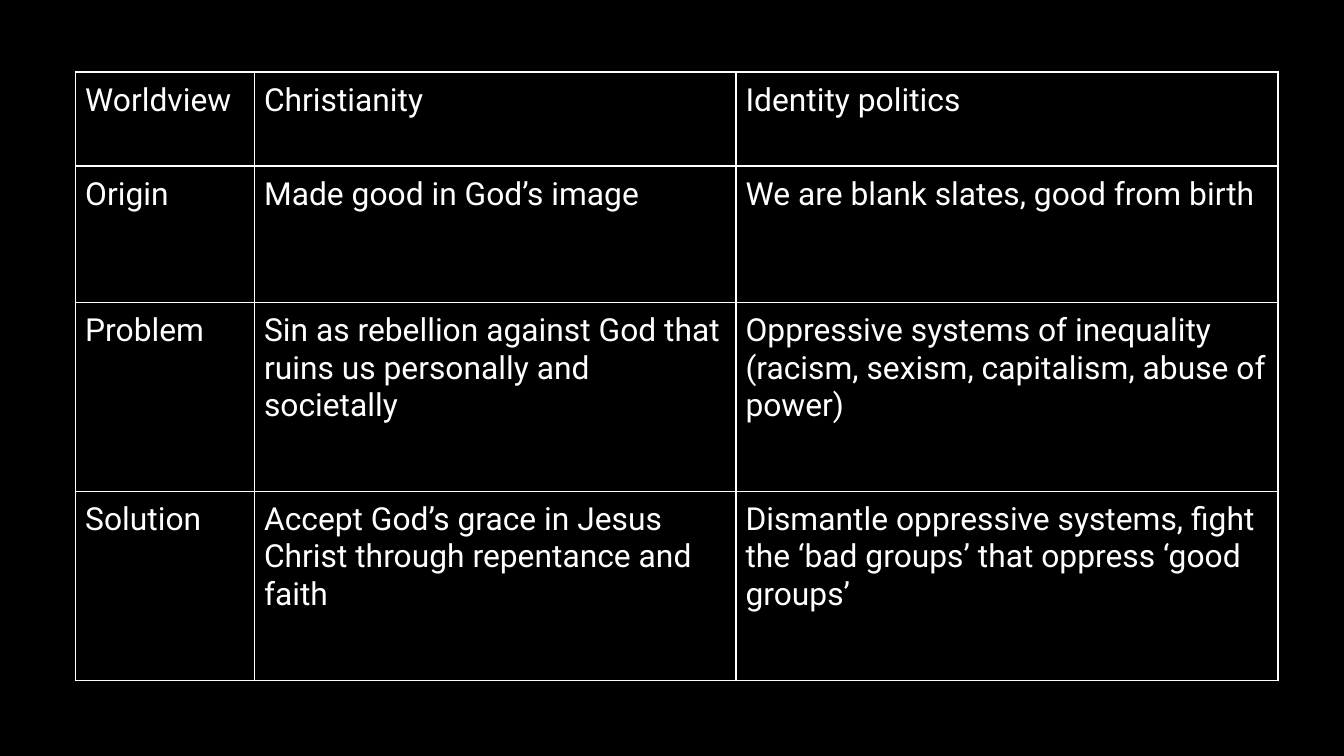
import pptx
import pptx.dml.color
import pptx.oxml.ns
import pptx.util
from lxml import etree

Cm = pptx.util.Cm
Pt = pptx.util.Pt
BLACK = pptx.dml.color.RGBColor(0x00, 0x00, 0x00)
WHITE = pptx.dml.color.RGBColor(0xFF, 0xFF, 0xFF)

# Content
ROWS = [
    ("Worldview", "Christianity", "Identity politics"),
    ("Origin", "Made good in God’s image", "We are blank slates, good from birth"),
    (
        "Problem",
        "Sin as rebellion against God that ruins us personally and societally",
        "Oppressive systems of inequality (racism, sexism, capitalism, abuse of power)",
    ),
    (
        "Solution",
        "Accept God’s grace in Jesus Christ through repentance and faith",
        "Dismantle oppressive systems, fight the ‘bad groups’ that oppress ‘good groups’",
    ),
]

# Layout in centimetres
LEFT, TOP = 1.43, 1.36
COLUMN_WIDTHS = [3.38, 9.1, 10.24]
ROW_HEIGHTS = [1.78, 2.58, 3.57, 3.57]
MARGIN = Cm(0.18)


def add_borders(cell, color, width):
    properties = cell._tc.get_or_add_tcPr()
    for side in ("a:lnL", "a:lnR", "a:lnT", "a:lnB"):
        line = etree.SubElement(properties, pptx.oxml.ns.qn(side), w=str(width))
        fill = etree.SubElement(line, pptx.oxml.ns.qn("a:solidFill"))
        etree.SubElement(fill, pptx.oxml.ns.qn("a:srgbClr"), val=str(color))


def fill_cell(cell, text):
    cell.margin_left = cell.margin_right = MARGIN
    cell.margin_top = cell.margin_bottom = MARGIN
    add_borders(cell, WHITE, Pt(1))
    cell.fill.background()
    run = cell.text_frame.paragraphs[0].add_run()
    run.text = text
    run.font.name = "Roboto"
    run.font.size = Pt(17)
    run.font.color.rgb = WHITE


# Slide with a black background
presentation = pptx.Presentation()
presentation.slide_width = Cm(25.4)
presentation.slide_height = Cm(14.29)
slide = presentation.slides.add_slide(presentation.slide_layouts[6])
slide.background.fill.solid()
slide.background.fill.fore_color.rgb = BLACK

# Comparison table
table = slide.shapes.add_table(
    len(ROWS), len(COLUMN_WIDTHS), Cm(LEFT), Cm(TOP),
    Cm(sum(COLUMN_WIDTHS)), Cm(sum(ROW_HEIGHTS)),
).table
table.first_row = False
table.horz_banding = False
for column, width in zip(table.columns, COLUMN_WIDTHS):
    column.width = Cm(width)
for row, height, texts in zip(table.rows, ROW_HEIGHTS, ROWS):
    row.height = Cm(height)
    for cell, text in zip(row.cells, texts):
        fill_cell(cell, text)

presentation.save("out.pptx")
